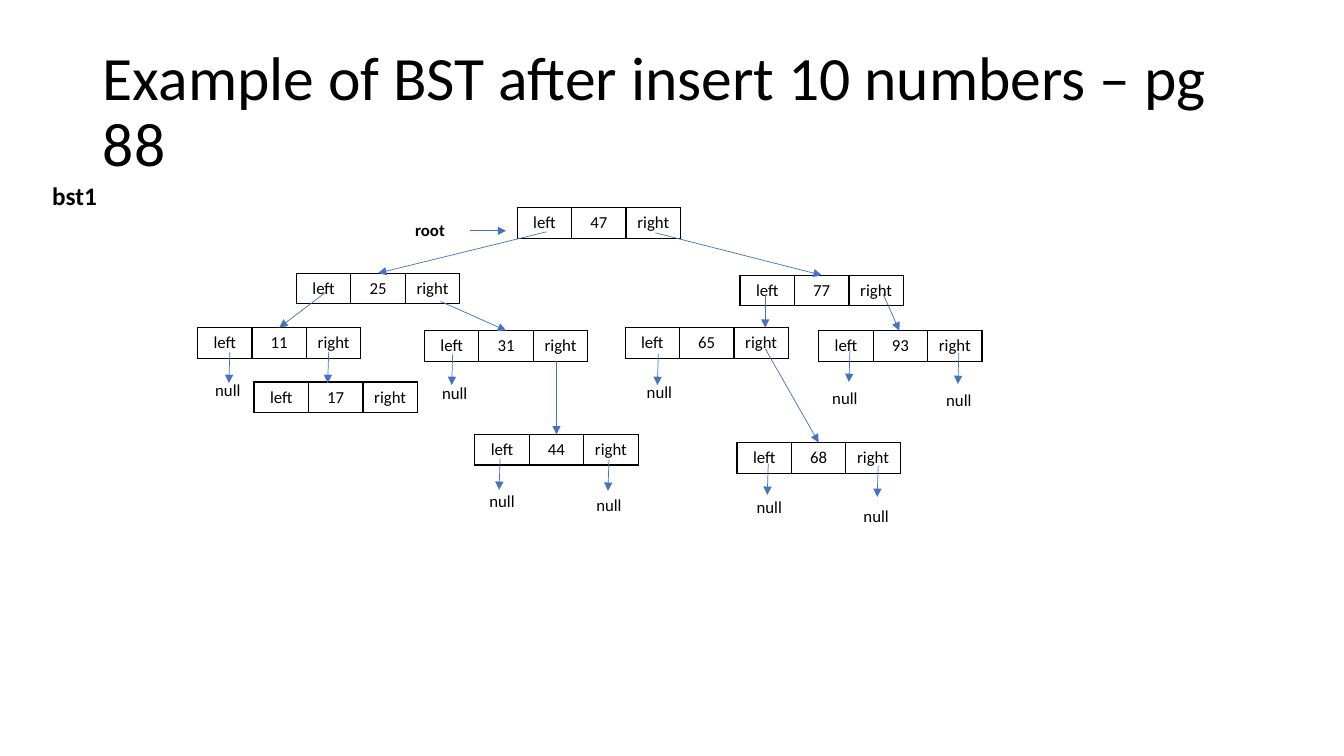
from lxml import etree
from pptx import Presentation, util as u
from pptx.dml.color import RGBColor
from pptx.enum import shapes, text
from pptx.oxml import parse_xml
from pptx.oxml.ns import nsdecls, qn

PX = 9144  # 100 px to the inch
COLORS = {"ink": "000000", "arrow": "4472C4"}
FONT = "Calibri"
CELL_W, ROW_H = 54, 30
LABEL_W = 64

# key: left, top
NODES = {
    47: (513, 206),
    25: (294, 271), 77: (734, 273),
    11: (196, 325), 31: (421, 328), 65: (620, 325), 93: (812, 328),
    17: (252, 379), 44: (471, 431), 68: (731, 439),
}
# start x, start y, end x, end y
LINKS = [
    (466, 229, 502, 229),
    (542, 230, 375, 271), (650, 231, 815, 273),
    (323, 290, 277, 325), (437, 299, 502, 328),
    (759, 293, 759, 325), (876, 292, 892, 328),
    (326, 349, 325, 380), (552, 358, 552, 431), (759, 346, 812, 439),
]
# arrow x, arrow y, label left, label top
NULLS = [
    (228, 349, 194, 372), (449, 351, 419, 375), (653, 351, 622, 374),
    (843, 348, 806, 380), (951, 350, 919, 382),
    (496, 455, 466, 482), (604, 456, 572, 486),
    (762, 460, 731, 488), (871, 462, 837, 497),
]
STUB = 31


def write(frame, words, size, align=text.PP_ALIGN.LEFT, bold=False):
    par = frame.paragraphs[0]
    par.alignment = align
    run = par.add_run()
    run.text = words
    run.font.name = FONT
    run.font.size = u.Pt(size)
    run.font.bold = bold
    run.font.color.rgb = RGBColor.from_string(COLORS["ink"])
    return par


def px(*vals):
    return [v * PX for v in vals]


deck = Presentation()
deck.slide_width, deck.slide_height = px(1333, 750)
slide = deck.slides.add_slide(deck.slide_layouts[5])
items = slide.shapes

title = items.title
title.left, title.top, title.width, title.height = px(92, 40, 1150, 145)
frame = title.text_frame
frame.word_wrap = True
frame.auto_size = text.MSO_AUTO_SIZE.NONE
frame.vertical_anchor = text.MSO_ANCHOR.MIDDLE
write(frame, "Example of BST after insert 10 numbers – pg 88", 44).line_spacing = 0.9

# Tree nodes
for key, (x, y) in NODES.items():
    table = items.add_table(1, 3, *px(x, y, 3 * CELL_W, ROW_H)).table
    table.first_row = table.horz_banding = False
    for col, words in enumerate(("left", str(key), "right")):
        table.columns[col].width = CELL_W * PX
        cell = table.cell(0, col)
        props = cell._tc.get_or_add_tcPr()
        for side in "LRTB":
            props.append(parse_xml(
                f'<a:ln{side} {nsdecls("a")} w="12700"><a:solidFill>'
                f'<a:srgbClr val="{COLORS["ink"]}"/></a:solidFill></a:ln{side}>'))
        cell.fill.background()
        write(cell.text_frame, words, 12, text.PP_ALIGN.CENTER)

# Arrows
stubs = [(x, y, x - 1, y + STUB) for x, y, *_ in NULLS]
for ends in LINKS + stubs:
    link = items.add_connector(shapes.MSO_CONNECTOR.STRAIGHT, *px(*ends))
    link.line.color.rgb = RGBColor.from_string(COLORS["arrow"])
    link.line.width = u.Pt(0.5)
    etree.SubElement(link.line._get_or_add_ln(), qn("a:tailEnd"), type="triangle")
    etree.SubElement(link._element.spPr, qn("a:effectLst"))

# Labels
mid, left = text.PP_ALIGN.CENTER, text.PP_ALIGN.LEFT
labels = [("null", x, y, LABEL_W, 30, 12, mid, False) for *_, x, y in NULLS]
labels += [("root", 402, 213, LABEL_W, 30, 12, left, True),
           ("bst1", 42, 174, 83, 40, 18, left, True)]
for words, x, y, w, h, size, align, bold in labels:
    frame = items.add_textbox(*px(x, y, w, h)).text_frame
    frame.word_wrap = True
    frame.auto_size = text.MSO_AUTO_SIZE.SHAPE_TO_FIT_TEXT
    write(frame, words, size, align, bold)

deck.save("out.pptx")
